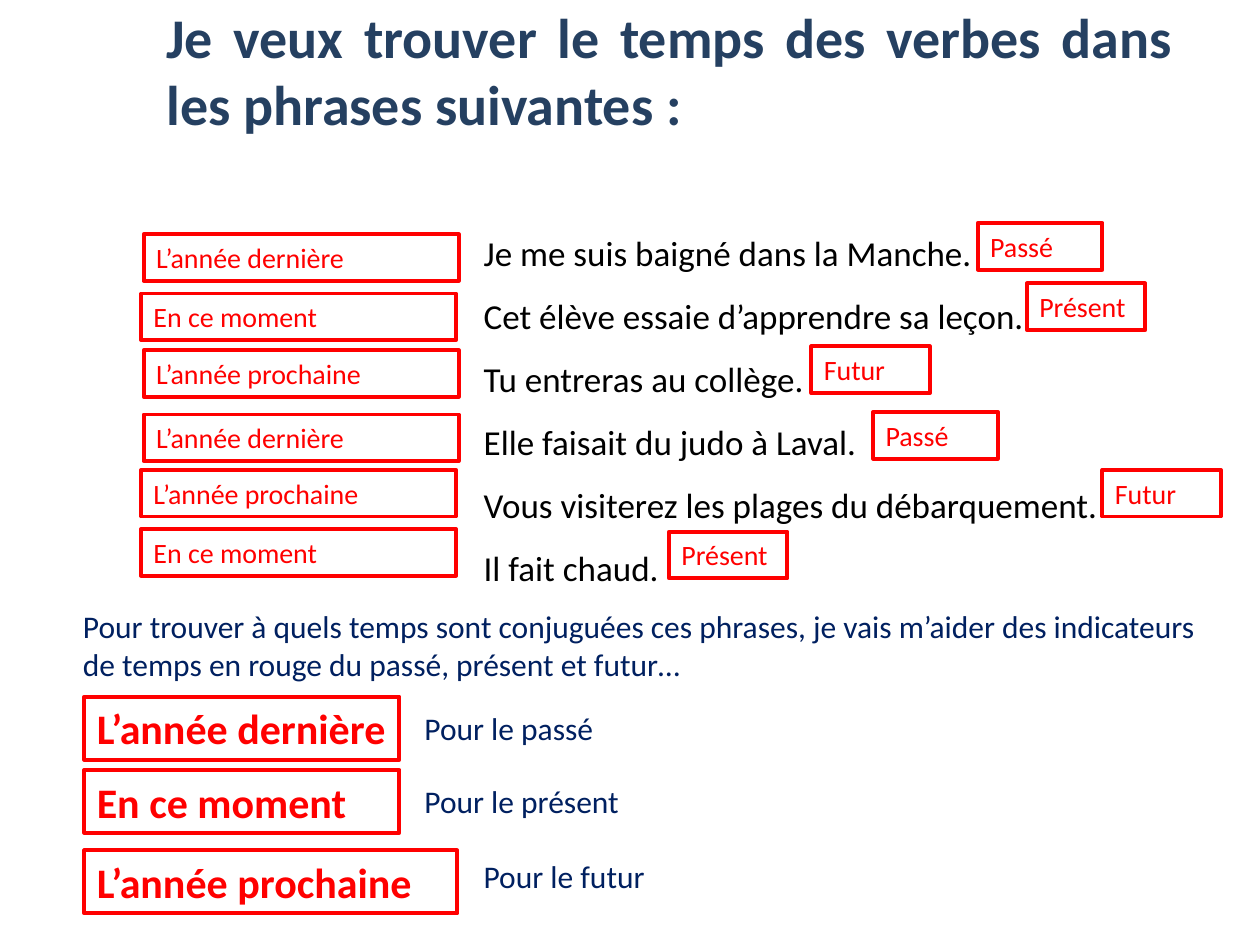
from dataclasses import dataclass

from pptx import Presentation
from pptx.dml.color import RGBColor
from pptx.enum.shapes import MSO_SHAPE
from pptx.enum.text import MSO_ANCHOR as ANCHOR, MSO_AUTO_SIZE as AUTO, PP_ALIGN as ALIGN
from pptx.util import Inches, Pt


@dataclass(frozen=True)
class Theme:
    """Colours, font and type sizes of the slide."""
    font: str = "Calibri"
    title: str = "254061"
    body: str = "000000"
    note: str = "002060"
    accent: str = "FF0000"
    paper: str = "FFFFFF"
    title_size: int = 32
    key_size: int = 24
    body_size: int = 20
    note_size: int = 18
    tag_size: int = 16
    border: float = 2.25


THEME = Theme()
PAST, NOW, NEXT = "L’année dernière", "En ce moment", "L’année prochaine"

# sentence, marker, marker left and top, tense, tense left, top and width
SENTENCES = [
    ("Je me suis baigné dans la Manche.", PAST, 1.14, 1.86, "Passé", 7.76, 1.77, 0.99),
    ("Cet élève essaie d’apprendre sa leçon.", NOW, 1.12, 2.33, "Présent", 8.15, 2.25, 0.94),
    ("Tu entreras au collège.", NEXT, 1.14, 2.78, "Futur", 6.44, 2.75, 0.94),
    ("Elle faisait du judo à Laval.", PAST, 1.14, 3.29, "Passé", 6.93, 3.27, 0.99),
    ("Vous visiterez les plages du débarquement.", NEXT, 1.12, 3.73, "Futur", 8.75, 3.73, 0.94),
    ("Il fait chaud.", NOW, 1.12, 4.2, "Présent", 5.31, 4.22, 0.94),
]
# marker, top, width, meaning, meaning left, top and width
KEYS = [
    (PAST, 5.53, 2.5, "Pour le passé", 3.27, 5.58, 1.57),
    (NOW, 6.11, 2.5, "Pour le présent", 3.27, 6.16, 1.79),
    (NEXT, 6.75, 2.96, "Pour le futur", 3.74, 6.75, 1.57),
]
NOTE = ("Pour trouver à quels temps sont conjuguées ces phrases, je vais m’aider "
        "des indicateurs de temps en rouge du passé, présent et futur…")


def apply(obj, values):
    """Set each attribute of obj from a dict."""
    for name, value in values.items():
        setattr(obj, name, value)


def write(tf, lines, size, color, bold=False, align=ALIGN.LEFT, spacing=None,
          anchor=ANCHOR.TOP, auto=AUTO.SHAPE_TO_FIT_TEXT):
    """Fill a text frame with one paragraph per line."""
    apply(tf, {"word_wrap": True, "auto_size": auto, "vertical_anchor": anchor})
    for i, line in enumerate(lines):
        p = tf.paragraphs[0] if i == 0 else tf.add_paragraph()
        apply(p, {"alignment": align, "line_spacing": spacing})
        r = p.add_run()
        r.text = line
        apply(r.font, {"name": THEME.font, "size": Pt(size), "bold": bold})
        r.font.color.rgb = RGBColor.from_string(color)


def add_title(s, text, box):
    """Place and format the title placeholder."""
    sp = s.shapes.title
    apply(sp, dict(zip(("left", "top", "width", "height"), map(Inches, box))))
    write(sp.text_frame, [text], THEME.title_size, THEME.title, bold=True,
          align=ALIGN.JUSTIFY, anchor=ANCHOR.MIDDLE, auto=AUTO.NONE)


def add_text(s, lines, box, size, color, spacing=None):
    """Add a plain text box."""
    sp = s.shapes.add_textbox(*map(Inches, box))
    write(sp.text_frame, lines, size, color, spacing=spacing)


def add_tag(s, text, box, size, bold=False):
    """Add a red-framed label."""
    sp = s.shapes.add_shape(MSO_SHAPE.RECTANGLE, *map(Inches, box))
    sp.shadow.inherit = False
    sp.fill.solid()
    sp.fill.fore_color.rgb = RGBColor.from_string(THEME.paper)
    sp.line.color.rgb = RGBColor.from_string(THEME.accent)
    sp.line.width = Pt(THEME.border)
    write(sp.text_frame, [text], size, THEME.accent, bold=bold)


def main():
    """Build the slide and save it."""
    prs = Presentation()
    apply(prs, {"slide_width": Inches(10), "slide_height": Inches(7.5)})
    s = prs.slides.add_slide(prs.slide_layouts[5])
    add_title(s, "Je veux trouver le temps des verbes dans les phrases suivantes :",
              (1.22, 0.05, 8.19, 1.01))
    add_text(s, [row[0] for row in SENTENCES], (3.74, 1.62, 5.35, 3.43),
             THEME.body_size, THEME.body, spacing=1.5)
    add_text(s, [NOTE], (0.56, 4.77, 9.21, 0.71), THEME.note_size, THEME.note)
    for marker, top, width, meaning, x, y, w in KEYS:
        add_tag(s, marker, (0.67, top, width, 0.5), THEME.key_size, bold=True)
        add_text(s, [meaning], (x, y, w, 0.4), THEME.note_size, THEME.note)
    for _, marker, left, top, tense, x, y, w in SENTENCES:
        add_tag(s, marker, (left, top, 2.5, 0.37), THEME.tag_size)
        add_tag(s, tense, (x, y, w, 0.37), THEME.tag_size)
    prs.save("out.pptx")


if __name__ == "__main__":
    main()
